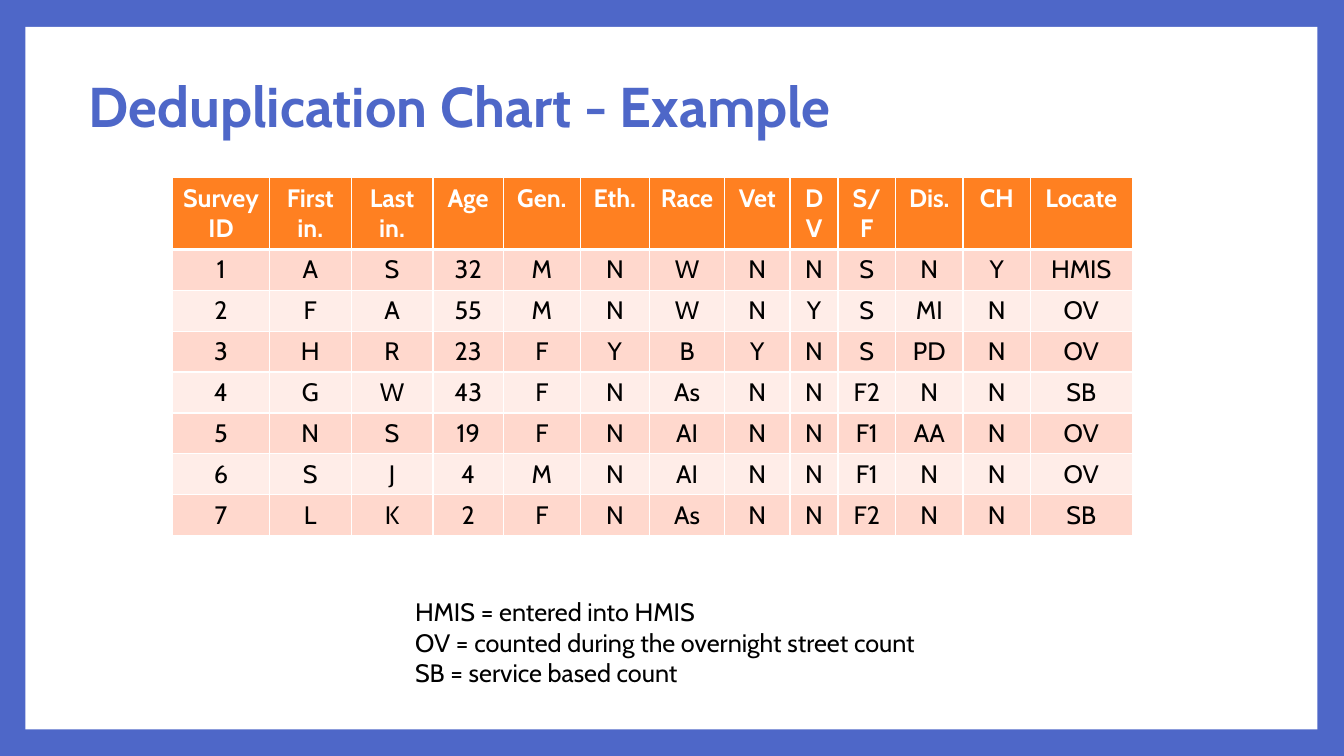
from dataclasses import dataclass

from lxml.etree import SubElement
from pptx import Presentation
from pptx.dml.color import RGBColor as RGB
from pptx.enum.shapes import MSO_SHAPE as SHAPE
from pptx.enum.text import MSO_ANCHOR as ANCHOR, MSO_AUTO_SIZE as AUTO, PP_ALIGN as ALIGN
from pptx.oxml.ns import qn
from pptx.util import Cm, Pt

FONT = "Cabin"
COLORS = {
    "blue": "4E67C8",
    "white": "FFFFFF",
    "black": "000000",
    "orange": "FF8021",
    "band_dark": "FFD8CD",
    "band_light": "FFEDE8",
}


@dataclass(frozen=True)
class Column:
    """A table column: heading, width in cm and one value per survey."""

    heading: str
    width: float
    values: str


COLUMNS = [
    Column("Survey ID", 2.44, "1 2 3 4 5 6 7"),
    Column("First in.", 2.06, "A F H G N S L"),
    Column("Last in.", 2.06, "S A R W S J K"),
    Column("Age", 1.78, "32 55 23 43 19 4 2"),
    Column("Gen.", 1.93, "M M F F F M F"),
    Column("Eth.", 1.75, "N N Y N N N N"),
    Column("Race", 1.89, "W W B As AI AI As"),
    Column("Vet", 1.65, "N N Y N N N N"),
    Column("DV", 1.21, "N Y N N N N N"),
    Column("S/F", 1.45, "S S S F2 F1 F1 F2"),
    Column("Dis.", 1.7, "N MI PD N AA N N"),
    Column("CH", 1.7, "Y N N N N N N"),
    Column("Locate", 2.56, "HMIS OV OV SB OV OV SB"),
]
LEGEND = [
    "HMIS = entered into HMIS",
    "OV = counted during the overnight street count",
    "SB = service based count",
]
HEADER_HEIGHT, ROW_HEIGHT = 1.78, 1.03


def style(p, size: float, color: str, bold: bool = False) -> None:
    """Format every run of a paragraph."""
    for r in p.runs:
        r.font.name = FONT
        r.font.size = Pt(size)
        r.font.bold = bold
        r.font.color.rgb = RGB.from_string(COLORS[color])


def add_border(cell, side: str, width: float) -> None:
    """Draw one white edge of a table cell."""
    tc_pr = cell._tc.get_or_add_tcPr()
    ln = SubElement(tc_pr, qn(f"a:ln{side}"), w=str(Pt(width)))
    fill = SubElement(ln, qn("a:solidFill"))
    SubElement(fill, qn("a:srgbClr"), val=COLORS["white"])


def fill_cell(cell, text: str, row: int) -> None:
    """Write and format a cell according to its row."""
    header = row == 0
    edges = {"L": 1, "R": 1, "T": 3 if row == 1 else 1, "B": 3 if header else 1}
    for side, width in edges.items():
        add_border(cell, side, width)
    band = "orange" if header else "band_dark" if row % 2 else "band_light"
    cell.fill.solid()
    cell.fill.fore_color.rgb = RGB.from_string(COLORS[band])
    cell.text_frame.text = text
    p = cell.text_frame.paragraphs[0]
    p.alignment = ALIGN.CENTER
    style(p, 18, "white" if header else "black", header)


def add_survey_table(s) -> None:
    """Add the deduplication table."""
    rows = list(zip(*([c.heading, *c.values.split()] for c in COLUMNS)))
    width = sum(c.width for c in COLUMNS)
    height = HEADER_HEIGHT + ROW_HEIGHT * (len(rows) - 1)
    table = s.shapes.add_table(
        len(rows), len(COLUMNS), Cm(4.35), Cm(4.48), Cm(width), Cm(height)
    ).table
    for column, spec_column in zip(table.columns, COLUMNS):
        column.width = Cm(spec_column.width)
    for i, texts in enumerate(rows):
        table.rows[i].height = Cm(ROW_HEIGHT if i else HEADER_HEIGHT)
        for j, text in enumerate(texts):
            fill_cell(table.cell(i, j), text, i)


def add_title(s, text: str) -> None:
    """Place and format the title placeholder."""
    sp = s.shapes.title
    sp.left, sp.top, sp.width, sp.height = Cm(1.98), Cm(1.7), Cm(24.84), Cm(2.11)
    tf = sp.text_frame
    tf.text = text
    tf.vertical_anchor = ANCHOR.MIDDLE
    p = tf.paragraphs[0]
    p.alignment = ALIGN.LEFT
    p.line_spacing = 0.9
    style(p, 40, "blue", True)


def add_panel(s) -> None:
    """Put the white panel on the blue background, behind the title."""
    s.background.fill.solid()
    s.background.fill.fore_color.rgb = RGB.from_string(COLORS["blue"])
    sp = s.shapes.add_shape(SHAPE.RECTANGLE, Cm(0.64), Cm(0.68), Cm(32.56), Cm(17.7))
    sp.shadow.inherit = False
    sp.fill.solid()
    sp.fill.fore_color.rgb = RGB.from_string(COLORS["white"])
    sp.line.fill.background()
    s.shapes.title.element.addprevious(sp.element)


def add_legend(s) -> None:
    """Explain the location codes below the table."""
    tf = s.shapes.add_textbox(Cm(10.21), Cm(14.91), Cm(14.1), Cm(2.57)).text_frame
    tf.word_wrap = True
    tf.auto_size = AUTO.SHAPE_TO_FIT_TEXT
    tf.text = "\n".join(LEGEND)
    for p in tf.paragraphs:
        style(p, 18, "black")


def main() -> None:
    """Build and save the slide."""
    prs = Presentation()
    prs.slide_width, prs.slide_height = Cm(33.87), Cm(19.05)
    s = prs.slides.add_slide(prs.slide_layouts[5])
    add_panel(s)
    add_title(s, "Deduplication Chart - Example")
    add_survey_table(s)
    add_legend(s)
    prs.save("out.pptx")


if __name__ == "__main__":
    main()
